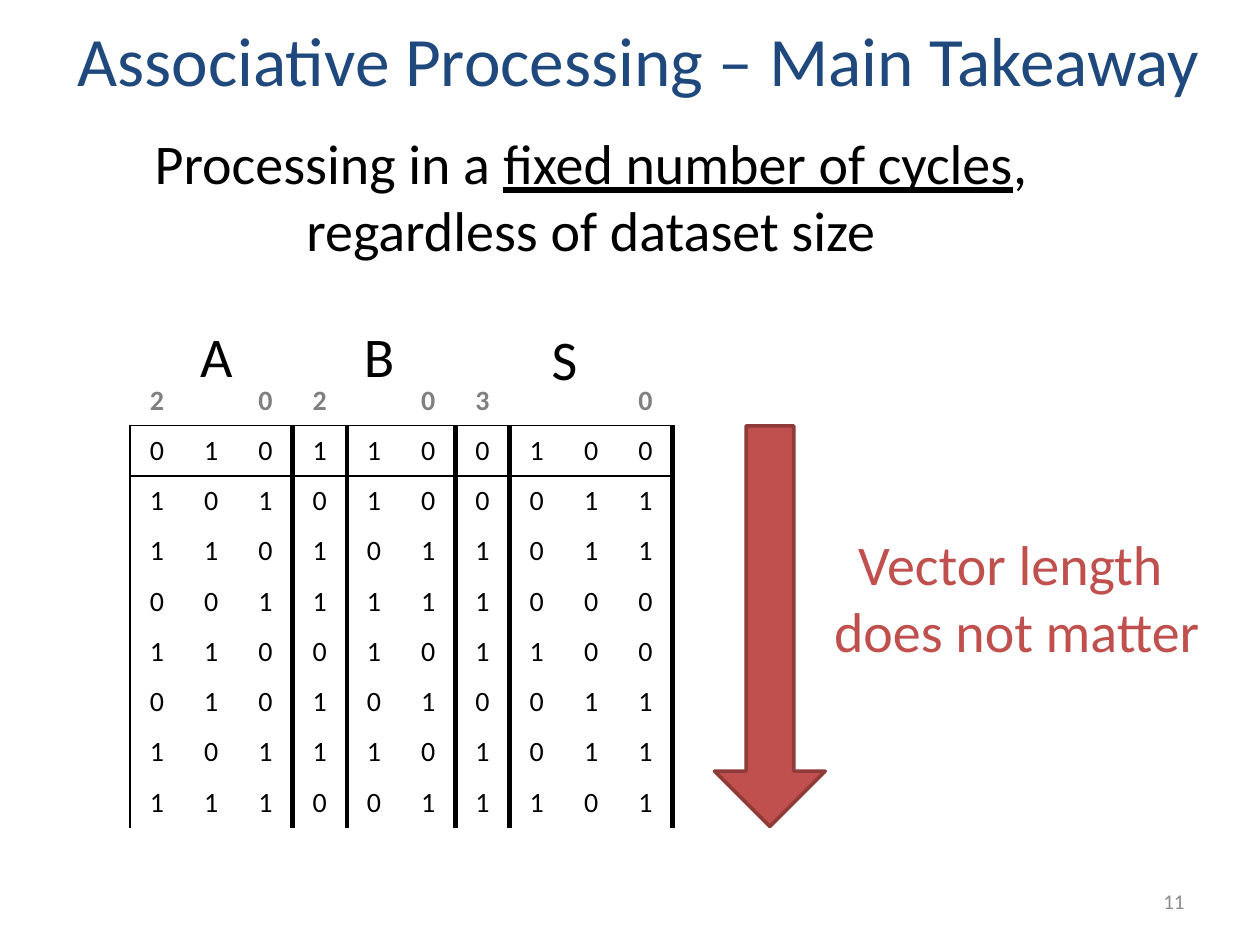
from lxml.etree import SubElement
from pptx import Presentation
from pptx.dml.color import RGBColor
from pptx.enum.shapes import MSO_SHAPE
from pptx.enum.text import MSO_ANCHOR, PP_ALIGN
from pptx.oxml.ns import qn
from pptx.util import Inches, Pt

COLOURS = {
    "title": "1F497D",
    "text": "000000",
    "bit index": "808080",
    "page number": "8C8C8C",
    "accent": "C0504D",
    "accent edge": "8E3B39",
}
GRID_COLUMNS, GRID_ROWS = 100, 75
NO_STYLE_NO_GRID = "{2D5ABB26-0587-4C30-8999-92F81FD0307C}"

BIT_INDEXES = ["2", "", "0", "2", "", "0", "3", "", "", "0"]
# Each row holds the bits of A, B and S.
VECTORS = [
    "0101100100",
    "1010100011",
    "1101011011",
    "0011111000",
    "1100101100",
    "0101010011",
    "1011101011",
    "1110011101",
]
OPERAND_STARTS = (3, 6)


class SlideBuilder:
    font_name = "Calibri"

    def __init__(self, presentation):
        self.slide = presentation.slides.add_slide(presentation.slide_layouts[6])
        self.column = presentation.slide_width / GRID_COLUMNS
        self.row = presentation.slide_height / GRID_ROWS

    def place(self, left, top, width, height):
        """Turn grid columns and rows into slide lengths."""
        return (round(left * self.column), round(top * self.row),
                round(width * self.column), round(height * self.row))

    def add_run(self, paragraph, text, size, colour, bold=False, underline=False):
        run = paragraph.add_run()
        run.text = text
        run.font.name = self.font_name
        run.font.size = Pt(size)
        run.font.bold = bold
        run.font.underline = underline
        run.font.color.rgb = RGBColor.from_string(COLOURS[colour])

    def text(self, box, paragraphs, size, colour="text", align=PP_ALIGN.CENTER,
             anchor=MSO_ANCHOR.TOP, wrap=True):
        """Add a text box; each paragraph is a list of (text, underline) runs."""
        frame = self.slide.shapes.add_textbox(*self.place(*box)).text_frame
        frame.word_wrap = wrap
        frame.vertical_anchor = anchor
        for number, runs in enumerate(paragraphs):
            paragraph = frame.add_paragraph() if number else frame.paragraphs[0]
            paragraph.alignment = align
            for text, underline in runs:
                self.add_run(paragraph, text, size, colour, underline=underline)

    def down_arrow(self, box, shaft_share, head_share):
        shape = self.slide.shapes.add_shape(MSO_SHAPE.UP_ARROW, *self.place(*box))
        shape.rotation = 180
        shape.adjustments[0] = shaft_share
        shape.adjustments[1] = head_share
        shape.shadow.inherit = False
        shape.fill.solid()
        shape.fill.fore_color.rgb = RGBColor.from_string(COLOURS["accent"])
        shape.line.color.rgb = RGBColor.from_string(COLOURS["accent edge"])
        shape.line.width = Pt(2)

    def border(self, cell, side, width):
        properties = cell._tc.get_or_add_tcPr()
        line = SubElement(properties, qn(f"a:ln{side}"), w=str(Pt(width)))
        fill = SubElement(line, qn("a:solidFill"))
        SubElement(fill, qn("a:srgbClr"), val=COLOURS["text"])

    def bit_cell(self, cell, text, colour, bold, borders):
        cell.vertical_anchor = MSO_ANCHOR.MIDDLE
        cell.margin_left = cell.margin_right = 0
        cell.margin_top = cell.margin_bottom = Inches(0.05) if text else 0
        if text:
            paragraph = cell.text_frame.paragraphs[0]
            paragraph.alignment = PP_ALIGN.CENTER
            self.add_run(paragraph, text, 16, colour, bold)
        # The schema wants borders in the order L, R, T, B, then the fill.
        for side in "LRTB":
            if side in borders:
                self.border(cell, side, borders[side])
        cell.fill.background()

    def bit_table(self, box, header, rows):
        left, top, width, height = self.place(*box)
        row_count, column_count = len(rows) + 1, len(header)
        table = self.slide.shapes.add_table(
            row_count, column_count, left, top, width, height).table
        table.first_row = table.horz_banding = False
        table._tbl.tblPr.find(qn("a:tableStyleId")).text = NO_STYLE_NO_GRID
        for column in table.columns:
            column.width = width // column_count
        for row in table.rows:
            row.height = height // row_count

        for x, index in enumerate(header):
            self.bit_cell(table.cell(0, x), index, "bit index", True, {"B": 1})
        for y, bits in enumerate(rows, start=1):
            for x, bit in enumerate(bits):
                borders = {}
                if x == 0:
                    borders["L"] = 1
                if x in OPERAND_STARTS:
                    borders["L"] = 3
                if x + 1 in (*OPERAND_STARTS, column_count):
                    borders["R"] = 3
                if y == 1:
                    borders["T"] = 1
                self.bit_cell(table.cell(y, x), bit, "text", False, borders)


def main():
    presentation = Presentation()
    presentation.slide_width = Inches(10)
    presentation.slide_height = Inches(7.5)
    builder = SlideBuilder(presentation)

    builder.text((3.9, 0, 93.6, 9.4),
                 [[("Associative Processing – Main Takeaway", False)]],
                 39.6, "title", anchor=MSO_ANCHOR.MIDDLE)
    builder.text((71.7, 69.5, 23.3, 4), [[("11", False)]], 12, "page number",
                 PP_ALIGN.RIGHT, MSO_ANCHOR.MIDDLE)
    builder.bit_table((10.3, 29.8, 43.1, 35.9), BIT_INDEXES, VECTORS)
    for name, left, top in (("A", 14.9, 25), ("B", 27.9, 25), ("S", 42.8, 25.3)):
        builder.text((left, top, 4.2, 6.4), [[(name, False)]], 32,
                     align=PP_ALIGN.LEFT)
    builder.down_arrow((56.7, 33.8, 8.8, 31.8), 0.43, 0.5)
    builder.text((65, 41.5, 31.4, 11.8),
                 [[("Vector length ", False)], [("does not matter", False)]],
                 32, "accent", wrap=False)
    builder.text((4, 9.7, 85.8, 11.8),
                 [[("Processing in a ", False), ("fixed number of cycles", True),
                   (",", False), (" ", True), ("regardless of dataset size", False)]],
                 32)
    presentation.save("out.pptx")


if __name__ == "__main__":
    main()
